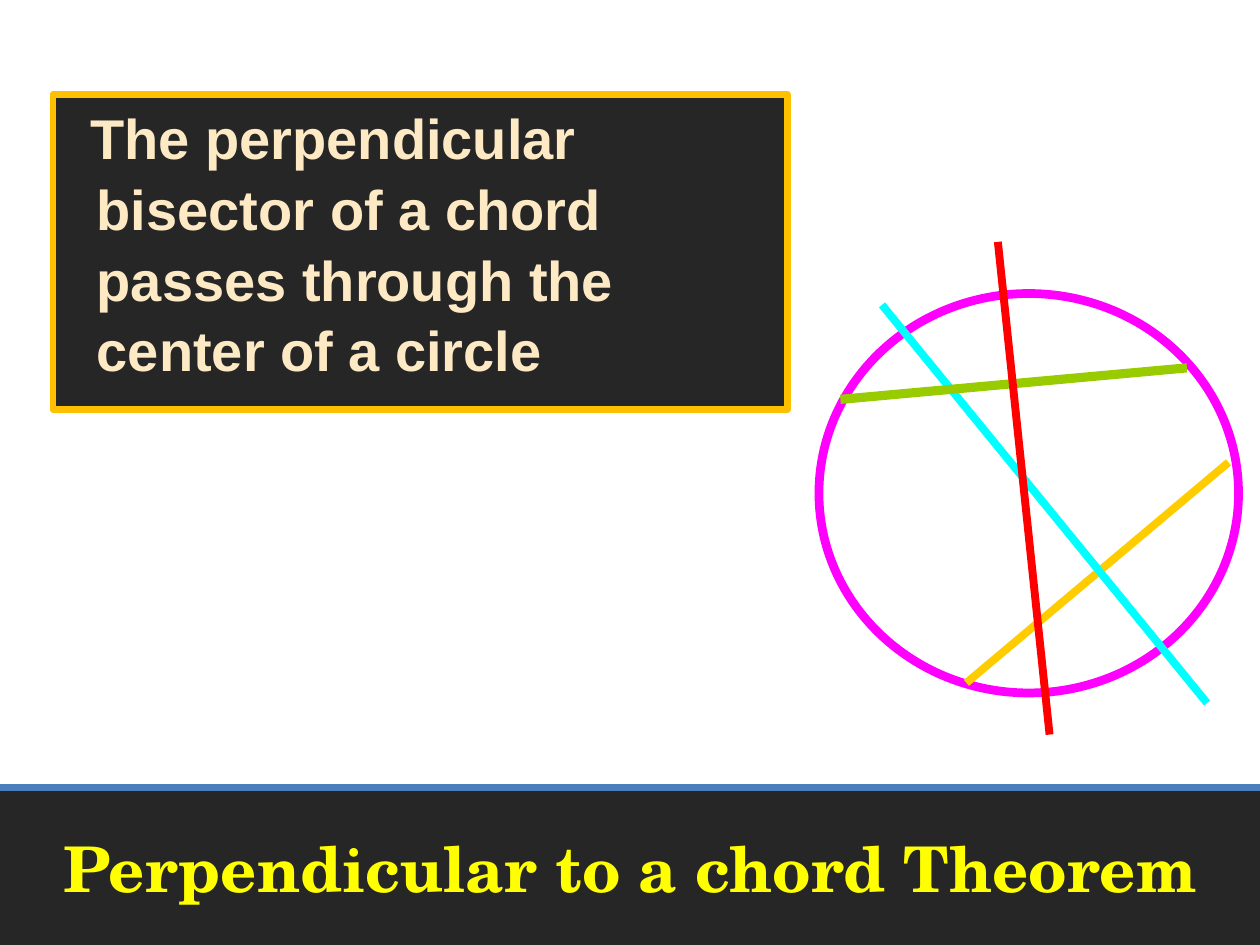
import pptx
import pptx.util
import pptx.dml.color
import pptx.enum.shapes
import pptx.enum.text
import pptx.oxml

Inches = pptx.util.Inches
Pt = pptx.util.Pt
Shape = pptx.enum.shapes.MSO_SHAPE
Align = pptx.enum.text.PP_ALIGN
Anchor = pptx.enum.text.MSO_ANCHOR

INK = {
    "dark": "262626", "blue": "4B7EBC", "gold": "FFC000", "title": "FFFF00",
    "cream": "FDEAC5", "pink": "FF00FF", "amber": "FFCC00", "cyan": "00FFFF",
    "green": "99CC00", "red": "FF0000",
}
LINES = [
    ((7.67, 5.42), (9.75, 3.67), "amber", 4.5),
    ((7, 2.42), (9.58, 5.58), "cyan", 4.5),
    ((6.67, 3.17), (9.42, 2.92), "green", 5.25),
    ((7.92, 1.92), (8.33, 5.83), "red", 4.5),
]


def color(name):
    return pptx.dml.color.RGBColor.from_string(INK[name])


def stroke(item, name, width):
    item.line.color.rgb = color(name)
    item.line.width = Pt(width)


def add_box(shapes, kind, at, fill=None, line=None, width=1):
    box = shapes.add_shape(kind, *map(Inches, at))
    box.shadow.inherit = False
    if fill:
        box.fill.solid()
        box.fill.fore_color.rgb = color(fill)
    else:
        box.fill.background()
    if line:
        stroke(box, line, width)
    else:
        box.line.fill.background()
    return box


def add_line(shapes, start, end, name, width):
    line = shapes.add_connector(
        pptx.enum.shapes.MSO_CONNECTOR.STRAIGHT, *map(Inches, start + end))
    stroke(line, name, width)
    props = line._element.spPr
    props.append(pptx.oxml.parse_xml(
        '<a:effectLst xmlns:a="http://schemas.openxmlformats.org/drawingml/2006/main"/>'))


def set_text(shape, text, font, size, ink, align=Align.LEFT,
             anchor=Anchor.TOP, left=0, indent=0, spacing=1.0):
    frame = shape.text_frame
    frame.word_wrap = True
    frame.auto_size = pptx.enum.text.MSO_AUTO_SIZE.NONE
    frame.vertical_anchor = anchor
    para = frame.paragraphs[0]
    para.alignment = align
    para.line_spacing = spacing
    props = para._p.get_or_add_pPr()
    props.set("marL", str(Inches(left)))
    props.set("indent", str(Inches(indent)))
    run = para.add_run()
    run.text = text
    run.font.name = font
    run.font.size = Pt(size)
    run.font.bold = True
    run.font.color.rgb = color(ink)


def add_title(slide):
    title = slide.shapes.title
    title.left, title.top, title.width, title.height = map(
        Inches, (0, 6.42, 10, 0.92))
    set_text(title, "Perpendicular to a chord Theorem", "TeX Gyre Schola", 36,
             "title", align=Align.CENTER, anchor=Anchor.MIDDLE)
    slide.shapes._spTree.append(title._element)


def add_circle(slide):
    group = slide.shapes.add_group_shape()
    add_box(group.shapes, Shape.OVAL, (6.5, 2.33, 3.33, 3.17),
            line="pink", width=5)
    for line in LINES:
        add_line(group.shapes, *line)


def main():
    deck = pptx.Presentation()
    deck.slide_width, deck.slide_height = Inches(10), Inches(7.5)
    slide = deck.slides.add_slide(deck.slide_layouts[5])
    shapes = slide.shapes
    add_box(shapes, Shape.RECTANGLE, (0, 6.25, 10, 1.25), fill="dark")
    add_line(shapes, (0, 6.25), (10, 6.25), "blue", 4)
    add_box(shapes, Shape.RECTANGLE, (0.42, 0.75, 5.83, 2.5),
            fill="dark", line="gold", width=3.75)
    add_title(slide)
    body = shapes.add_textbox(*map(Inches, (0, 0.75, 6.33, 2.33)))
    set_text(body, "The perpendicular bisector of a chord passes through "
             "the center of a circle", "Arial", 32, "cream",
             left=0.67, indent=-0.05, spacing=1.05)
    add_circle(slide)
    deck.save("out.pptx")


if __name__ == "__main__":
    main()
